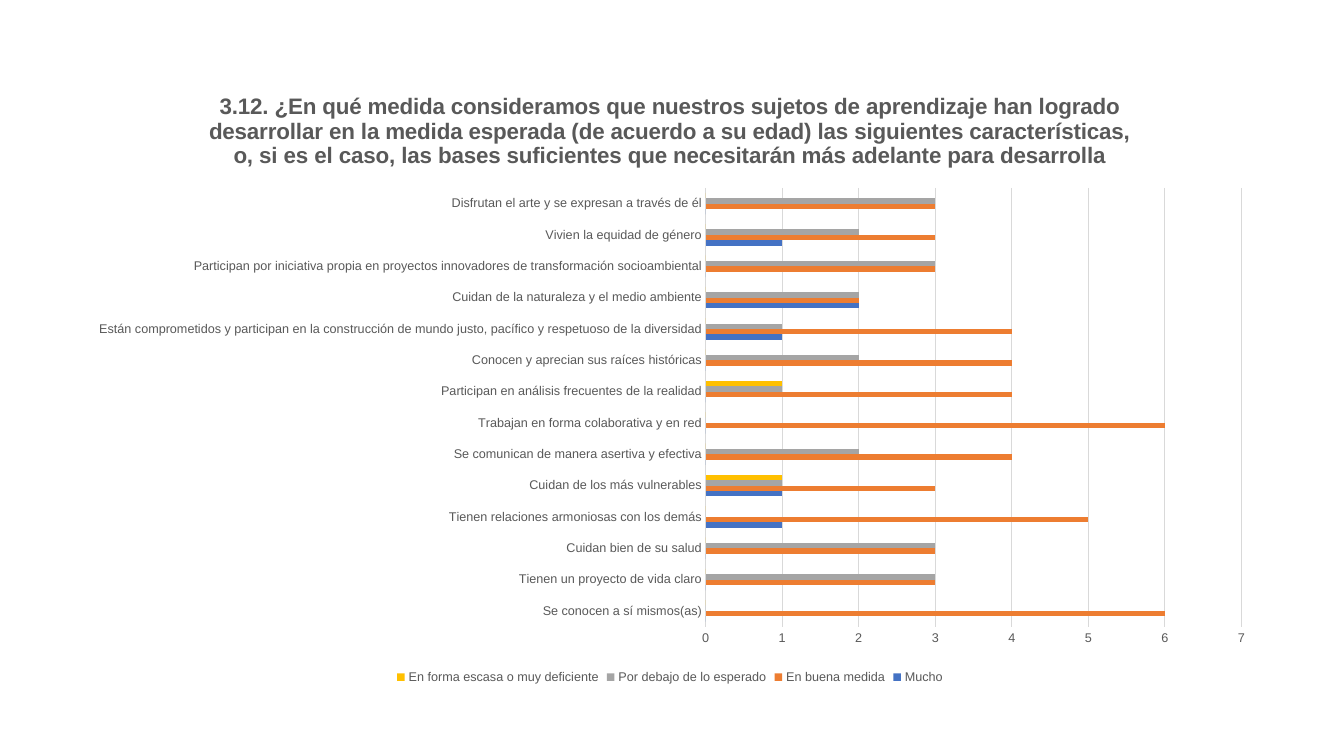
from lxml import etree
from pptx import Presentation
from pptx.chart.data import CategoryChartData
from pptx.dml.color import RGBColor
from pptx.enum.chart import XL_CHART_TYPE, XL_LEGEND_POSITION, XL_TICK_MARK
from pptx.oxml.ns import qn
from pptx.util import Inches, Pt

BAR_CLUSTERED = XL_CHART_TYPE.BAR_CLUSTERED
LEGEND_BOTTOM = XL_LEGEND_POSITION.BOTTOM
NO_TICK = XL_TICK_MARK.NONE

COLORS = {
    "text": "595959",
    "line": "D9D9D9",
    "Mucho": "4472C4",
    "En buena medida": "ED7D31",
    "Por debajo de lo esperado": "A5A5A5",
    "En forma escasa o muy deficiente": "FFC000",
}

TITLE = (
    "3.12. ¿En qué medida consideramos que nuestros sujetos de aprendizaje han logrado "
    "desarrollar en la medida esperada (de acuerdo a su edad) las siguientes características, "
    "o, si es el caso, las bases suficientes que necesitarán más adelante para desarrolla"
)

LEVELS = ["Mucho", "En buena medida", "Por debajo de lo esperado",
          "En forma escasa o muy deficiente"]

# Answers per characteristic, in the order of LEVELS
ANSWERS = {
    "Se conocen a sí mismos(as)": (0, 6, 0, 0),
    "Tienen un proyecto de vida claro": (0, 3, 3, 0),
    "Cuidan bien de su salud": (0, 3, 3, 0),
    "Tienen relaciones armoniosas con los demás": (1, 5, 0, 0),
    "Cuidan de los más vulnerables": (1, 3, 1, 1),
    "Se comunican de manera asertiva y efectiva": (0, 4, 2, 0),
    "Trabajan en forma colaborativa y en red": (0, 6, 0, 0),
    "Participan en análisis frecuentes de la realidad": (0, 4, 1, 1),
    "Conocen y aprecian sus raíces históricas": (0, 4, 2, 0),
    "Están comprometidos y participan en la construcción de mundo justo, "
    "pacífico y respetuoso de la diversidad": (1, 4, 1, 0),
    "Cuidan de la naturaleza y el medio ambiente": (2, 2, 2, 0),
    "Participan por iniciativa propia en proyectos innovadores de "
    "transformación socioambiental": (0, 3, 3, 0),
    "Vivien la equidad de género": (1, 3, 2, 0),
    "Disfrutan el arte y se expresan a través de él": (0, 3, 3, 0),
}


def format_font(font, size=9, bold=False, color="text"):
    font.name = "Arial"
    font.size = Pt(size)
    font.bold = bold
    font.color.rgb = RGBColor.from_string(COLORS[color])


def format_line(line):
    line.color.rgb = RGBColor.from_string(COLORS["line"])
    line.width = Pt(0.75)


presentation = Presentation()
presentation.slide_width = Inches(13.33)
presentation.slide_height = Inches(7.5)
slide = presentation.slides.add_slide(presentation.slide_layouts[6])

# Chart data
chart_data = CategoryChartData()
chart_data.categories = list(ANSWERS)
for level, values in zip(LEVELS, zip(*ANSWERS.values())):
    chart_data.add_series(level, values)

chart = slide.shapes.add_chart(
    BAR_CLUSTERED, Inches(0.74), Inches(0.7), Inches(11.81), Inches(6.13), chart_data
).chart
format_font(chart.font)

# Title
chart.has_title = True
title_paragraph = chart.chart_title.text_frame.paragraphs[0]
title_run = title_paragraph.add_run()
title_run.text = TITLE
format_font(title_run.font, size=16, bold=True)
chart.chart_title.include_in_layout = False

# Bars
plot = chart.plots[0]
plot.gap_width = 182
plot.overlap = 0
plot.vary_by_categories = False
for series in plot.series:
    series.format.fill.solid()
    series.format.fill.fore_color.rgb = RGBColor.from_string(COLORS[series.name])

# Axes
category_axis, value_axis = chart.category_axis, chart.value_axis
for axis in (category_axis, value_axis):
    axis.major_tick_mark = NO_TICK
    axis.minor_tick_mark = NO_TICK
    format_font(axis.tick_labels.font)
format_line(category_axis.format.line)
value_axis.format.line.fill.background()
value_axis.minimum_scale = 0
value_axis.maximum_scale = 7
value_axis.major_unit = 1
value_axis.has_major_gridlines = True
format_line(value_axis.major_gridlines.format.line)

# Legend
chart.has_legend = True
chart.legend.position = LEGEND_BOTTOM
chart.legend.include_in_layout = False
format_font(chart.legend.font)

# Plot area as fractions of the chart, leaving room for the long labels
plot_area = chart.element.find(".//" + qn("c:plotArea"))
for old_layout in plot_area.findall(qn("c:layout")):
    plot_area.remove(old_layout)
layout = etree.Element(qn("c:layout"))
manual_layout = etree.SubElement(layout, qn("c:manualLayout"))
for tag, value in (("layoutTarget", "inner"), ("xMode", "edge"), ("yMode", "edge"),
                   ("x", "0.53"), ("y", "0.19"), ("w", "0.45"), ("h", "0.71")):
    etree.SubElement(manual_layout, qn("c:" + tag)).set("val", value)
plot_area.insert(0, layout)

presentation.save("out.pptx")
